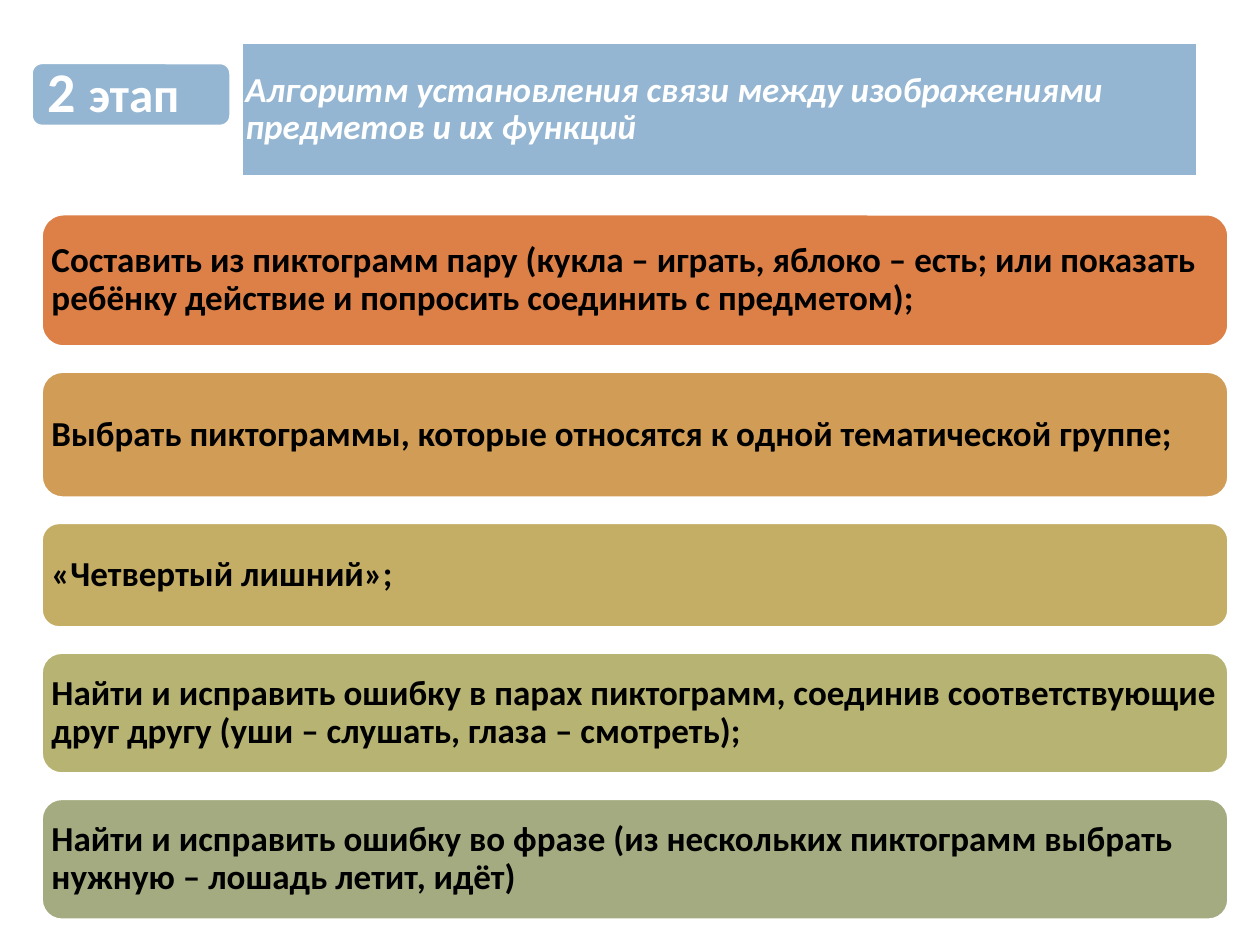
from lxml.etree import SubElement
from pptx import Presentation
from pptx.dml.color import RGBColor
from pptx.enum.shapes import MSO_SHAPE as Shape
from pptx.enum.text import MSO_ANCHOR as Anchor, MSO_AUTO_SIZE as AutoSize, PP_ALIGN as Align
from pptx.oxml.ns import qn
from pptx.util import Inches, Pt

COLORS = {
    "white": "FFFFFF",
    "black": "000000",
    "blue": "94B6D2",
    "orange": "DD8047",
    "amber": "D09C56",
    "sand": "C4AD64",
    "olive": "B7B473",
    "sage": "A5AB81",
}

STEPS = [
    (1.05, "orange", "Составить из пиктограмм пару (кукла – играть, яблоко – есть; "
                     "или показать ребёнку действие и попросить соединить с предметом);"),
    (1.0, "amber", "Выбрать пиктограммы, которые относятся к одной тематической группе;"),
    (0.83, "sand", "«Четвертый лишний»;"),
    (0.96, "olive", "Найти и исправить ошибку в парах пиктограмм, соединив "
                    "соответствующие друг другу (уши – слушать, глаза – смотреть);"),
    (0.96, "sage", "Найти и исправить ошибку во фразе (из нескольких пиктограмм "
                   "выбрать нужную – лошадь летит, идёт)"),
]
STEP_LEFT, STEP_TOP, STEP_WIDTH, STEP_GAP = 0.33, 1.7, 9.42, 0.2


class SlideBuilder:
    font = "Calibri"
    line_width = 1.5
    line_spacing = 0.9
    corner_inset = 0.05

    def __init__(self, slide):
        self.slide = slide

    def color(self, name):
        return RGBColor.from_string(COLORS[name])

    def paint(self, box, fill):
        box.fill.solid()
        box.fill.fore_color.rgb = self.color(fill)
        box.line.color.rgb = self.color("white")
        box.line.width = Pt(self.line_width)

    def add_text(self, box, pieces, color, margin, italic=False):
        frame = box.text_frame
        frame.word_wrap = True
        frame.auto_size = AutoSize.NONE
        frame.vertical_anchor = Anchor.MIDDLE
        inset = Inches(margin) - int(self.corner_inset * box.height)
        frame.margin_left = frame.margin_right = inset
        frame.margin_top = frame.margin_bottom = inset
        para = frame.paragraphs[0]
        para.alignment = Align.LEFT
        para.line_spacing = self.line_spacing
        for text, size in pieces:
            span = para.add_run()
            span.text = text
            span.font.name = self.font
            span.font.size = Pt(size)
            span.font.bold = True
            span.font.italic = italic
            span.font.color.rgb = self.color(color)

    def title(self, left, top, width, height, text):
        box = self.slide.shapes.title
        box.left, box.top = Inches(left), Inches(top)
        box.width, box.height = Inches(width), Inches(height)
        geometry = SubElement(box.element.spPr, qn("a:prstGeom"), prst="roundRect")
        SubElement(geometry, qn("a:avLst"))
        self.paint(box, "blue")
        self.add_text(box, [(text, 20)], "white", 0.08, italic=True)

    def card(self, left, top, width, height, fill, pieces, color="black", margin=0.08):
        box = self.slide.shapes.add_shape(
            Shape.ROUNDED_RECTANGLE, Inches(left), Inches(top), Inches(width), Inches(height))
        box.shadow.inherit = False
        self.paint(box, fill)
        self.add_text(box, pieces, color, margin)


def main():
    deck = Presentation()
    deck.slide_width, deck.slide_height = Inches(10), Inches(7.5)
    page = SlideBuilder(deck.slides.add_slide(deck.slide_layouts[5]))

    page.title(1.92, 0.34, 7.58, 1.06,
               "Алгоритм установления связи между изображениями предметов и их функций")
    top = STEP_TOP
    for height, fill, text in STEPS:
        page.card(STEP_LEFT, top, STEP_WIDTH, height, fill, [(text, 20)])
        top += height + STEP_GAP
    page.card(0.25, 0.5, 1.58, 0.5, "blue", [("2 ", 32), ("этап", 28)], "white", 0.13)

    deck.save("out.pptx")


if __name__ == "__main__":
    main()
